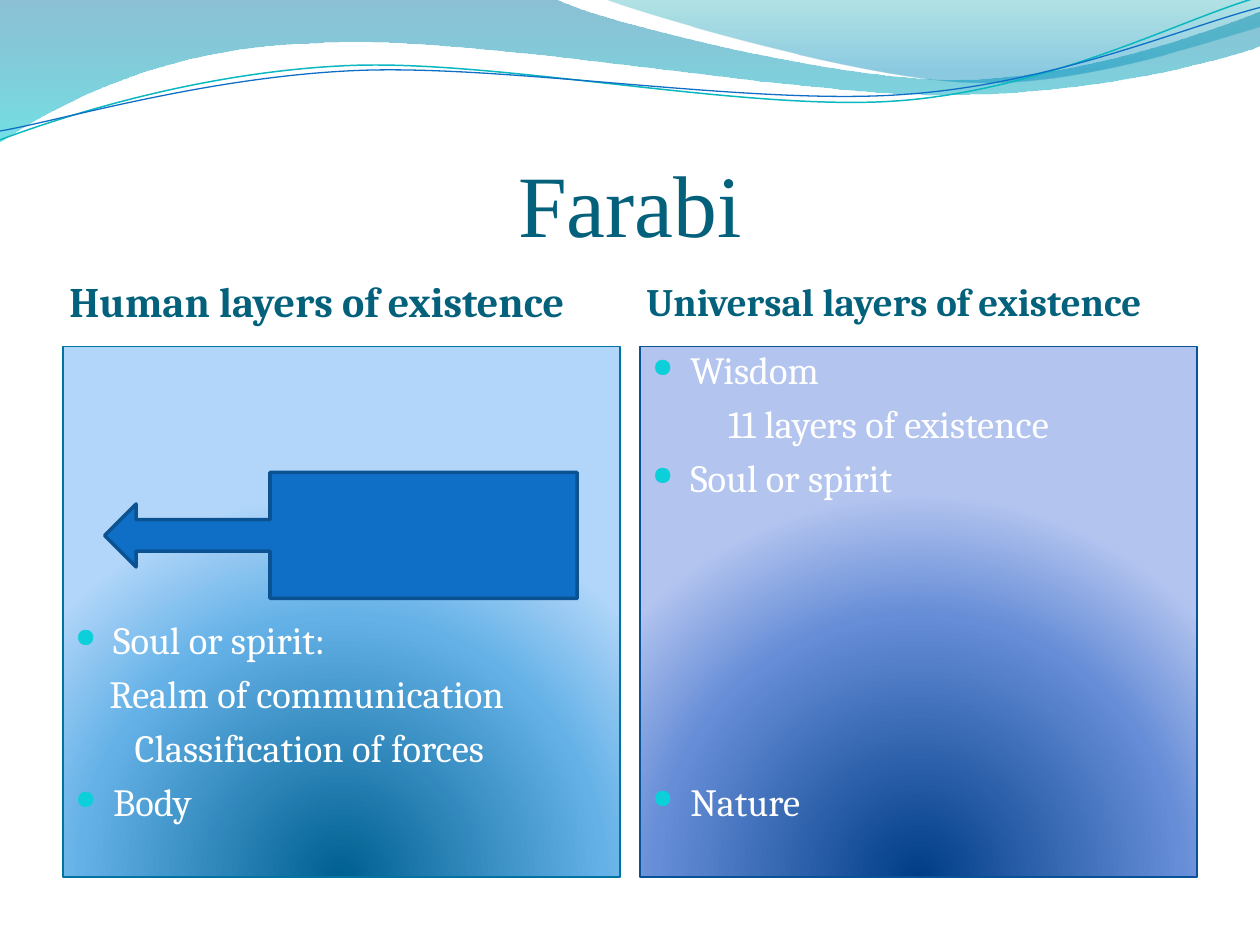
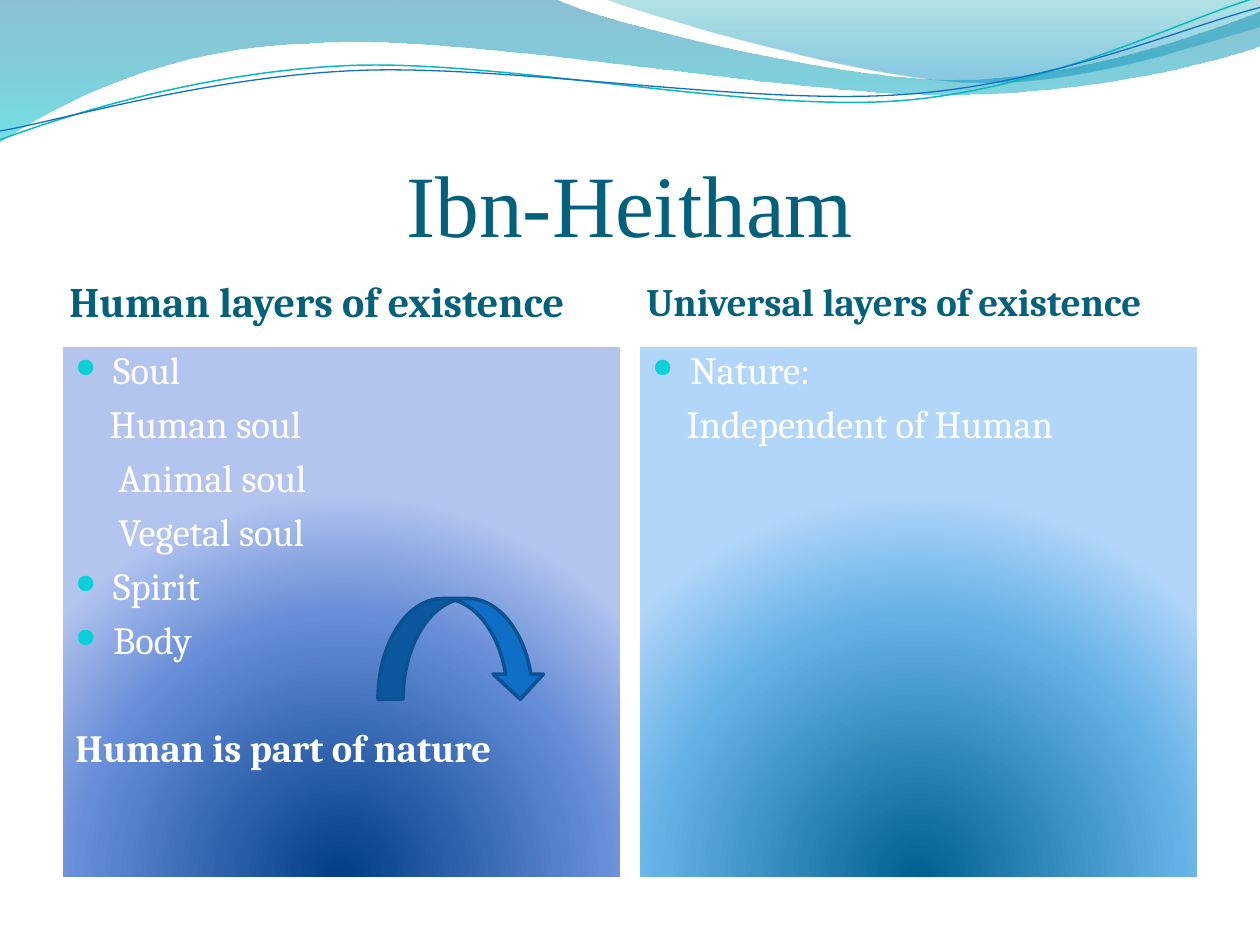
import math

from lxml import etree
from pptx import Presentation
from pptx import util as u
from pptx.dml.color import RGBColor
from pptx.enum import shapes, text
from pptx.oxml import ns

TEAL_TEXT = RGBColor(0x04, 0x61, 0x7B)
WHITE = RGBColor(0xFF, 0xFF, 0xFF)
BULLET = RGBColor(0x0B, 0xD0, 0xD9)
ARROW = RGBColor(0x0F, 0x6F, 0xC6)
ARROW_EDGE = RGBColor(0x0B, 0x52, 0x92)
AQUA_LINE = RGBColor(0x0A, 0xB8, 0xBF)
SKY_EDGE = RGBColor(0x00, 0x74, 0xA1)
INDIGO_EDGE = RGBColor(0x09, 0x52, 0x95)
SKY = [(0, RGBColor(0x00, 0x60, 0x91), 100),
       (68, RGBColor(0x64, 0xB1, 0xE7), 100),
       (100, RGBColor(0xB1, 0xD6, 0xF9), 100)]
INDIGO = [(0, RGBColor(0x00, 0x3D, 0x87), 100),
          (68, RGBColor(0x66, 0x8D, 0xD7), 100),
          (100, RGBColor(0xB3, 0xC4, 0xEF), 100)]
LEFT_WAVE = [(0, RGBColor(0x00, 0x74, 0xA1), 45),
             (100, RGBColor(0x00, 0xC6, 0xCF), 55)]
RIGHT_WAVE = [(0, RGBColor(0x00, 0xA1, 0xA9), 30),
              (80, RGBColor(0x00, 0x8B, 0xBF), 45)]

BANDS = [
    (LEFT_WAVE, [(0, 0), (4.4, -0.01), (4.76, 0.17, 6.64, 0.63, 7.58, 0.63),
                 (8.53, 0.63, 9.58, 0.26, 10, 0.09), (10.01, 0.36),
                 (9.83, 0.44, 8.7, 0.76, 7.46, 0.75),
                 (6.22, 0.75, 3.82, 0.28, 2.57, 0.34),
                 (1.29, 0.36, 0.46, 0.83, -0.01, 1.13), (0, 0)]),
    (RIGHT_WAVE, [(4.79, -0.01), (5.09, 0.11, 6.82, 0.62, 7.69, 0.65),
                  (8.56, 0.69, 9.61, 0.32, 10, 0.21), (10, 0), (4.79, -0.01)]),
]
STRANDS = [
    (AQUA_LINE, 0.85, (4.99, 0.58), [(0, 1.11), (0.48, 0.93, 1.58, 0.57, 2.77, 0.52),
                                     (3.95, 0.47, 5.93, 0.89, 7.13, 0.8),
                                     (8.33, 0.71, 9.38, 0.15, 9.98, -0.02)]),
    (ARROW, 0.75, (5, 0.59), [(0, 1.04), (0.47, 0.96, 1.64, 0.61, 2.83, 0.56),
                              (4.03, 0.51, 5.97, 0.84, 7.17, 0.75),
                              (8.36, 0.67, 9.41, 0.21, 10, 0.06)]),
]
STRAND_TILT = -2.7

HUMAN_LEFT, UNIVERSAL_LEFT, COLUMN_WIDTH = 0.5, 5.08, 4.42
PANEL_TOP, PANEL_HEIGHT = 2.75, 4.21
SPACE_BEFORE, LINE_PITCH = 4.4, 30.8
BULLETED = None


def turn(part, center, degrees):
    cos, sin = math.cos(math.radians(degrees)), math.sin(math.radians(degrees))
    turned = []
    for x, y in zip(part[::2], part[1::2]):
        dx, dy = x - center[0], y - center[1]
        turned += [center[0] + dx * cos - dy * sin, center[1] + dx * sin + dy * cos]
    return tuple(turned)


def apply(target, values):
    for name, value in values.items():
        setattr(target, name, value)


class Deck:
    heading_font = "Times New Roman"
    body_font = "Cambria"

    def __init__(self):
        self.prs = Presentation()
        apply(self.prs, {"slide_width": u.Inches(10), "slide_height": u.Inches(7.5)})
        self.layout = self.prs.slide_layouts[6]
        self.slide = None

    def new_slide(self, heading):
        first = self.slide is None
        self.slide = self.prs.slides.add_slide(self.layout)
        if first:
            self.waves()
        self.label(heading, (0.5, 0.77, 9, 1.25), text.MSO_ANCHOR.BOTTOM,
                   (0, 0.05, 0, 0), text.PP_ALIGN.CENTER,
                   {"size": u.Pt(50), "name": self.heading_font})
        for left, caption, size in ((HUMAN_LEFT, "Human layers of existence", 24),
                                    (UNIVERSAL_LEFT, "Universal layers of existence", 22.2)):
            self.label(caption, (left, 2.03, COLUMN_WIDTH, 0.72), text.MSO_ANCHOR.MIDDLE,
                       (0.05, 0, 0.05, 0), text.PP_ALIGN.LEFT,
                       {"size": u.Pt(size), "name": self.body_font, "bold": True})

    def waves(self):
        for stops, path in BANDS:
            band = self.outline(path, True)
            self.gradient(band, stops, '<a:lin ang="5400000" scaled="0"/>')
            band.line.fill.background()
        for color, weight, center, path in STRANDS:
            strand = self.outline([turn(part, center, -STRAND_TILT) for part in path], False)
            strand.rotation = STRAND_TILT
            strand.fill.background()
            self.edge(strand, color, weight)
        tree = self.layout.shapes._spTree
        for placeholder in list(self.layout.placeholders):
            tree.remove(placeholder._element)
        for wave in list(self.slide.shapes):
            tree.append(wave._element)

    def outline(self, path, closed):
        points = [(u.Inches(x), u.Inches(y)) for part in path
                  for x, y in zip(part[::2], part[1::2])]
        builder = self.slide.shapes.build_freeform(*points[0])
        builder.add_line_segments(points[1:], close=closed)
        shape = builder.convert_to_shape()
        shape.shadow.inherit = False
        segments = iter(list(shape._element.iter(ns.qn("a:lnTo"))))
        for part in path[1:]:
            segment = next(segments)
            if len(part) == 6:
                segment.tag_holder = None
                curve = etree.Element(ns.qn("a:cubicBezTo"))
                segment.addprevious(curve)
                for point in (segment, next(segments), next(segments)):
                    curve.append(point[0])
                    point.getparent().remove(point)
        return shape

    def gradient(self, shape, stops, direction):
        marks = "".join(
            f'<a:gs pos="{pos * 1000}"><a:srgbClr val="{color}">'
            f'<a:alpha val="{opacity * 1000}"/></a:srgbClr></a:gs>'
            for pos, color, opacity in stops)
        fill = etree.fromstring(
            f'<a:gradFill {ns.nsdecls("a")} rotWithShape="1">'
            f'<a:gsLst>{marks}</a:gsLst>{direction}</a:gradFill>')
        shape.fill.background()
        properties = shape._element.spPr
        properties.replace(properties.find(ns.qn("a:noFill")), fill)

    def edge(self, shape, color, weight):
        shape.line.color.rgb = color
        shape.line.width = u.Pt(weight)

    def frame(self, shape, anchor, insets):
        sides = ("margin_left", "margin_top", "margin_right", "margin_bottom")
        apply(shape.text_frame, {"word_wrap": True, "vertical_anchor": anchor,
                                 **dict(zip(sides, map(u.Inches, insets)))})
        return shape.text_frame

    def label(self, words, box, anchor, insets, alignment, style):
        holder = self.slide.shapes.add_textbox(*map(u.Inches, box))
        paragraph = self.frame(holder, anchor, insets).paragraphs[0]
        paragraph.alignment = alignment
        run = paragraph.add_run()
        run.text = words
        apply(run.font, style)
        run.font.color.rgb = TEAL_TEXT

    def preset(self, kind, box):
        shape = self.slide.shapes.add_shape(kind, *map(u.Inches, box))
        shape.shadow.inherit = False
        return shape

    def panel(self, left, stops, layers, edge=None, top_inset=0):
        box = (left, PANEL_TOP, COLUMN_WIDTH, PANEL_HEIGHT)
        panel = self.preset(shapes.MSO_SHAPE.RECTANGLE, box)
        self.gradient(panel, stops,
                      '<a:path path="circle"><a:fillToRect l="50000" t="130000"'
                      ' r="50000" b="-30000"/></a:path>')
        if edge:
            self.edge(panel, edge, 0.75)
        else:
            panel.line.fill.background()
        frame = self.frame(panel, text.MSO_ANCHOR.TOP, (0.1, top_inset, 0.1, 0.05))
        for index, (words, indent, skipped, bold) in enumerate(layers):
            paragraph = frame.add_paragraph() if index else frame.paragraphs[0]
            before = SPACE_BEFORE + skipped * LINE_PITCH if index else 0
            apply(paragraph, {"alignment": text.PP_ALIGN.LEFT, "space_before": u.Pt(before)})
            self.indent(paragraph, indent)
            run = paragraph.add_run()
            run.text = words
            apply(run.font, {"size": u.Pt(22), "name": self.body_font, "bold": bold})
            run.font.color.rgb = WHITE

    def indent(self, paragraph, indent):
        properties = paragraph._p.get_or_add_pPr()
        if indent is not BULLETED:
            properties.set("marL", str(u.Inches(indent)))
            properties.set("indent", "0")
            return
        properties.set("marL", str(u.Inches(0.3)))
        properties.set("indent", str(u.Inches(-0.3)))
        color = etree.SubElement(properties, ns.qn("a:buClr"))
        etree.SubElement(color, ns.qn("a:srgbClr"), val=str(BULLET))
        etree.SubElement(properties, ns.qn("a:buSzPct"), val="68000")
        etree.SubElement(properties, ns.qn("a:buChar"), char="●")

    def arrow(self, kind, box):
        arrow = self.preset(kind, box)
        arrow.fill.solid()
        arrow.fill.fore_color.rgb = ARROW
        self.edge(arrow, ARROW_EDGE, 2)


def layer(words, indent=BULLETED, skipped=0, bold=False):
    return words, indent, skipped, bold


def main():
    deck = Deck()

    deck.new_slide("Farabi")
    deck.panel(HUMAN_LEFT, SKY, [
        layer("Soul or spirit:"),
        layer("Realm of communication", 0.27),
        layer("Classification of forces", 0.47),
        layer("Body"),
    ], SKY_EDGE, top_inset=2.14)
    deck.panel(UNIVERSAL_LEFT, INDIGO, [
        layer("Wisdom"),
        layer("11 layers of existence", 0.6),
        layer("Soul or spirit"),
        layer("Nature", skipped=5),
    ], INDIGO_EDGE)
    deck.arrow(shapes.MSO_SHAPE.LEFT_ARROW_CALLOUT, (0.83, 3.75, 3.75, 1))

    deck.new_slide("Ibn-Heitham")
    deck.panel(HUMAN_LEFT, INDIGO, [
        layer("Soul"),
        layer("Human soul", 0.27),
        layer("Animal soul", 0.34),
        layer("Vegetal soul", 0.34),
        layer("Spirit"),
        layer("Body"),
        layer("Human is part of nature", 0, skipped=1, bold=True),
    ])
    deck.panel(UNIVERSAL_LEFT, SKY, [
        layer("Nature:"),
        layer("Independent of Human", 0.27),
    ])
    deck.arrow(shapes.MSO_SHAPE.CURVED_DOWN_ARROW, (3, 4.75, 1.33, 0.8))

    deck.prs.save("out.pptx")


if __name__ == "__main__":
    main()
